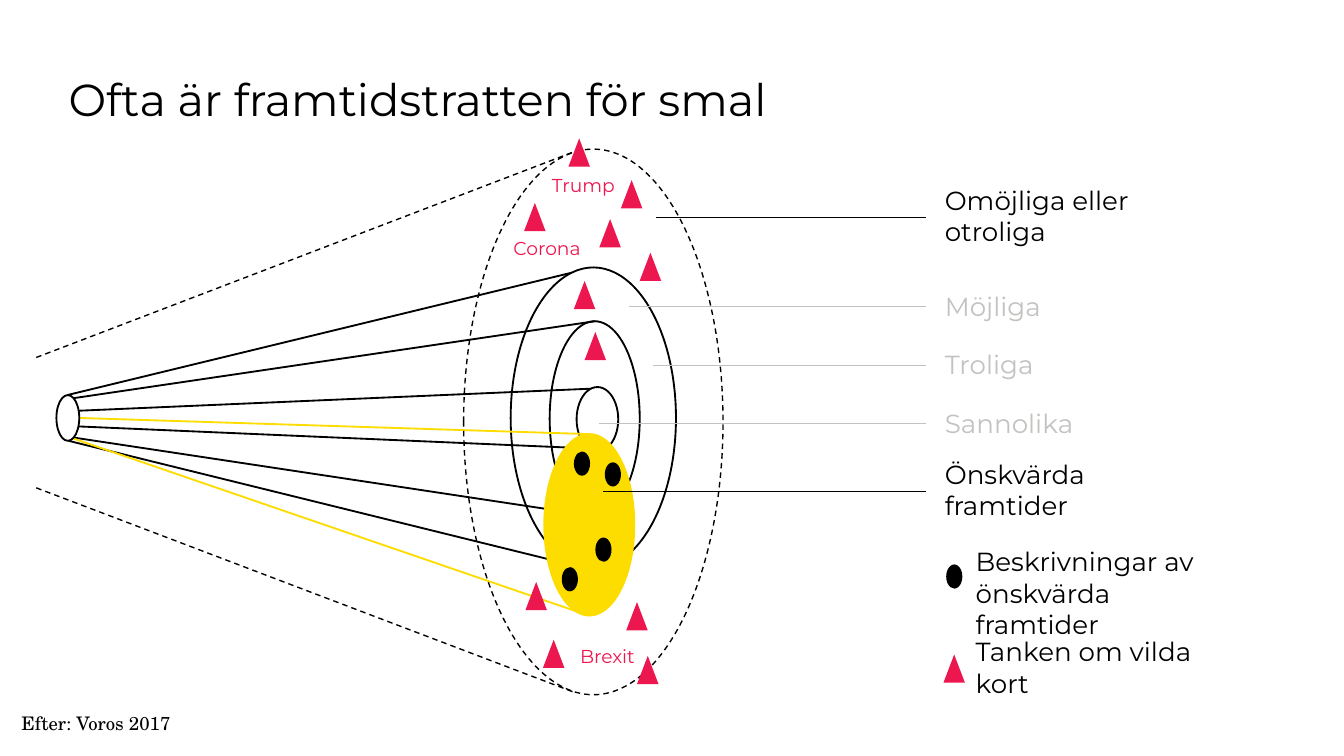
"""Builds a slide with a cone of possible futures and its labels."""
from dataclasses import dataclass

from lxml import etree
from pptx import Presentation
from pptx import util as u
from pptx.dml.color import RGBColor
from pptx.enum import dml, shapes, text
from pptx.oxml import ns


@dataclass(frozen=True)
class Theme:
    """Holds colours, fonts, type sizes and line widths."""
    ink: str = "000000"
    paper: str = "FFFFFF"
    gold: str = "FDDD00"
    red: str = "ED174F"
    grey: str = "C2C3C0"
    sans: str = "Montserrat"
    serif: str = "TeX Gyre Schola"
    title: int = 24
    label: int = 14
    small: int = 10
    bold: float = 1
    dash: float = 0.75
    thin: float = 0.5


class Board:
    """Draws styled elements on the current slide."""
    scale = 9144

    def __init__(self, slide, theme):
        """Keeps the slide and the theme."""
        self.slide, self.theme = slide, theme

    def emu(self, *sizes):
        """Turns px into EMU."""
        return [u.Emu(size * self.scale) for size in sizes]

    def stroke(self, line, color, width, dashed=False):
        """Styles a line or an outline."""
        line.color.rgb = RGBColor.from_string(color)
        line.width = u.Pt(width)
        if dashed:
            line.dash_style = dml.MSO_LINE.DASH

    def line(self, start, end, color, width, dashed=False):
        """Joins two points with a straight line."""
        item = self.slide.shapes.add_connector(
            shapes.MSO_CONNECTOR.STRAIGHT, *self.emu(*start, *end))
        self.stroke(item.line, color, width, dashed)
        etree.SubElement(item._element.spPr, ns.qn("a:effectLst"))

    def shape(self, kind, box, fill=None, color=None, width=1, dashed=False):
        """Adds a preset shape with optional fill and outline."""
        item = self.slide.shapes.add_shape(kind, *self.emu(*box))
        item.shadow.inherit = False
        if fill:
            item.fill.solid()
            item.fill.fore_color.rgb = RGBColor.from_string(fill)
        else:
            item.fill.background()
        if color:
            self.stroke(item.line, color, width, dashed)
        else:
            item.line.fill.background()

    def oval(self, box, fill=None, color=None, width=1, dashed=False):
        """Adds an ellipse."""
        self.shape(shapes.MSO_SHAPE.OVAL, box, fill, color, width, dashed)

    def dot(self, left, top):
        """Marks a wanted future."""
        self.oval((left, top, 12, 18), self.theme.ink)

    def card(self, left, top):
        """Marks a wild card."""
        self.shape(shapes.MSO_SHAPE.FLOWCHART_EXTRACT,
                   (left, top, 16, 21), self.theme.red)

    def text(self, box, words, size, color, font=None, center=False,
             middle=False, pad=0):
        """Adds a text box, breaking lines at newlines."""
        frame = self.slide.shapes.add_textbox(*self.emu(*box)).text_frame
        frame.word_wrap = True
        frame.margin_left, frame.margin_bottom = self.emu(pad, pad)
        frame.margin_top = frame.margin_right = 0
        if middle:
            frame.vertical_anchor = text.MSO_ANCHOR.MIDDLE
        para = frame.paragraphs[0]
        para.alignment = text.PP_ALIGN.CENTER if center else text.PP_ALIGN.LEFT
        for row, part in enumerate(words.split("\n")):
            if row:
                para.add_line_break()
            run = para.add_run()
            run.text = part
            run.font.name = font or self.theme.sans
            run.font.size = u.Pt(size)
            run.font.color.rgb = RGBColor.from_string(color)

    def label(self, box, words, color, tip, level):
        """Names a zone and leads a line to it."""
        self.text(box, words, self.theme.label, color)
        self.line((689, level), (tip, level), color, self.theme.thin)


def legend(board):
    """Draws the key to the marks."""
    theme = board.theme
    board.dot(704, 420)
    board.text((726, 406, 265, 47), "Beskrivningar av önskvärda \nframtider",
               theme.label, theme.ink)
    board.text((726, 473, 171, 47), "Tanken om vilda kort",
               theme.label, theme.ink)
    board.card(702, 487)


def cone(board):
    """Draws the nested cones from back to front."""
    theme = board.theme
    for start, end in [((445, 289), (50, 306)), ((50, 297), (443, 239)),
                       ((50, 294), (425, 203)), ((445, 334), (51, 317)),
                       ((51, 325), (435, 383)), ((51, 328), (432, 422))]:
        board.line(start, end, theme.ink, theme.bold)
    for box, fill, color in [((429, 288, 31, 48), theme.paper, theme.ink),
                             ((409, 239, 67, 145), None, theme.ink),
                             ((380, 199, 123, 224), None, theme.ink),
                             ((405, 323, 67, 135), theme.gold, theme.gold)]:
        board.oval(box, fill, color, theme.bold)
    for start, end in [((45, 323), (438, 458)), ((59, 311), (438, 323))]:
        board.line(start, end, theme.gold, theme.bold)
    board.oval((42, 294, 17, 34), theme.paper, theme.ink, theme.bold)
    for start, end in [((27, 266), (427, 113)), ((27, 363), (427, 515))]:
        board.line(start, end, theme.ink, theme.dash, True)
    board.oval((345, 111, 193, 406), None, theme.ink, theme.dash, True)


def marks(board):
    """Places dots, wild cards and their names."""
    theme = board.theme
    for spot in [(443, 400), (418, 422), (450, 344), (427, 336)]:
        board.dot(*spot)
    for left, top, name in [(398, 129, "Trump"), (371, 176, "Corona"),
                            (416, 480, "Brexit")]:
        board.text((left, top, 72, 17), name, theme.small, theme.red,
                   center=True)
    for spot in [(427, 209), (435, 247), (476, 188), (446, 163), (390, 151),
                 (462, 134), (423, 103), (466, 448), (391, 433), (404, 476),
                 (474, 488)]:
        board.card(*spot)


def labels(board):
    """Writes the title, the credit and the zone names."""
    theme = board.theme
    board.text((51, 29, 898, 88), "Ofta är framtidstratten för smal",
               theme.title, theme.ink, middle=True)
    board.text((0, 530, 225, 33), "Efter: Voros 2017", theme.small,
               theme.ink, theme.serif, pad=16)
    for top, width, high, words, color, tip, level in [
            (137, 194, 47, "Omöjliga eller otroliga", theme.ink, 488, 162),
            (216, 133, 24, "Möjliga", theme.grey, 468, 228),
            (259, 150, 24, "Troliga", theme.grey, 486, 272),
            (303, 172, 24, "Sannolika", theme.grey, 446, 315),
            (341, 172, 47, "Önskvärda framtider", theme.ink, 449, 366)]:
        board.label((703, top, width, high), words, color, tip, level)


def main():
    """Builds and saves the deck."""
    deck = Presentation()
    deck.slide_width, deck.slide_height = u.Pt(720), u.Pt(405)
    board = Board(deck.slides.add_slide(deck.slide_layouts[6]), Theme())
    for draw in (legend, cone, marks, labels):
        draw(board)
    deck.save("out.pptx")


if __name__ == "__main__":
    main()
